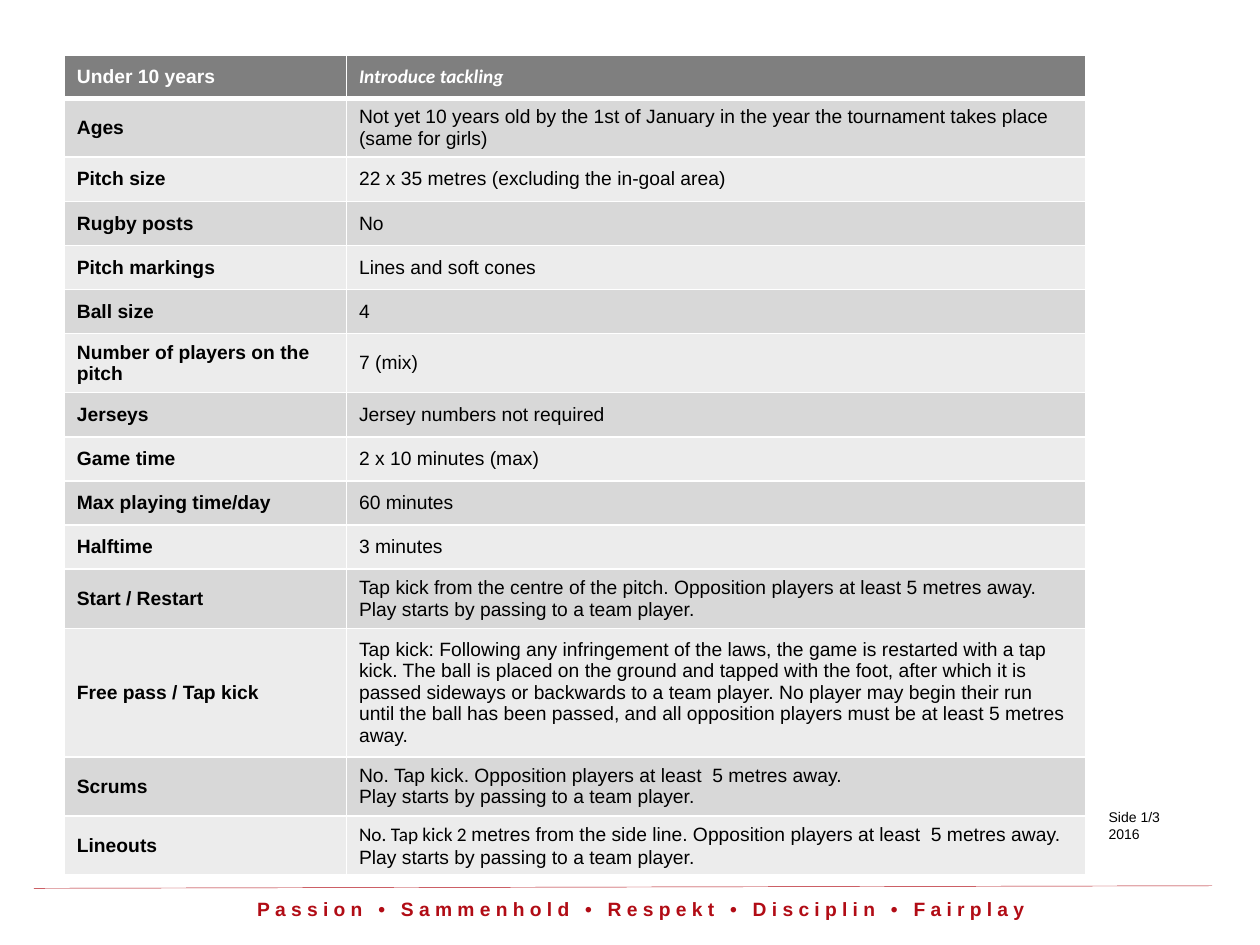
from lxml import etree
from pptx import Presentation, util as u
from pptx.dml.color import RGBColor
from pptx.enum import shapes, text
from pptx.oxml.ns import qn

THEME = {
    "red": RGBColor.from_string("B10C15"),
    "white": RGBColor.from_string("FFFFFF"),
    "black": RGBColor.from_string("000000"),
    "header": RGBColor.from_string("7F7F7F"),
    "bands": [RGBColor.from_string("D8D8D8"), RGBColor.from_string("ECECEC")],
    "body": u.Pt(11),
    "small": u.Pt(8),
}

RULES = [
    (0.34, "Under 10 years", "Introduce tackling"),
    (0.46, "Ages", "Not yet 10 years old by the 1st of January in the year the "
     "tournament takes place\n(same for girls)"),
    (0.35, "Pitch size", "22 x 35 metres (excluding the in-goal area)"),
    (0.35, "Rugby posts", "No"),
    (0.35, "Pitch markings", "Lines and soft cones"),
    (0.35, "Ball size", "4"),
    (0.47, "Number of players on the pitch", "7 (mix)"),
    (0.35, "Jerseys", "Jersey numbers not required"),
    (0.35, "Game time", "2 x 10 minutes (max)"),
    (0.35, "Max playing time/day", "60 minutes"),
    (0.35, "Halftime", "3 minutes"),
    (0.47, "Start / Restart", "Tap kick from the centre of the pitch. Opposition players "
     "at least 5 metres away. Play starts by passing to a team player."),
    (1.02, "Free pass / Tap kick", "Tap kick: Following any infringement of the laws, the "
     "game is restarted with a tap kick. The ball is placed on the ground and tapped with "
     "the foot, after which it is passed sideways or backwards to a team player. No player "
     "may begin their run until the ball has been passed, and all opposition players must "
     "be at least 5 metres away."),
    (0.47, "Scrums", "No. Tap kick. Opposition players at least  5 metres away.\n"
     "Play starts by passing to a team player."),
    (0.47, "Lineouts", "No. Tap kick 2 |metres from the side line. Opposition players "
     "at least  5 metres away.\nPlay starts by passing to a team player."),
]


def write(frame, content, color, **format_values):
    values = {"name": "Arial", "size": THEME["body"], "bold": False, **format_values}
    for index, line in enumerate(content.split("\n")):
        paragraph = frame.add_paragraph() if index else frame.paragraphs[0]
        for part in line.split("|"):
            run = paragraph.add_run()
            run.text = part
            run.font.color.rgb = color
            for key, value in values.items():
                setattr(run.font, key, value)


def add_border(cell, side, points):
    line = etree.SubElement(cell._tc.get_or_add_tcPr(), qn(f"a:ln{side}"),
                            w=str(u.Pt(points)))
    fill = etree.SubElement(line, qn("a:solidFill"))
    etree.SubElement(fill, qn("a:srgbClr"), val=str(THEME["white"]))


prs = Presentation()
prs.slide_width, prs.slide_height = u.Inches(10), u.Inches(7.5)
slide = prs.slides.add_slide(prs.slide_layouts[6])

motto = slide.shapes.add_textbox(u.Inches(1.68), u.Inches(7.07), u.Inches(6.82), u.Inches(0.47))
motto.text_frame.word_wrap = True
write(motto.text_frame, "Passion\u00a0• Sammenhold • Respekt • Disciplin • Fairplay".replace("\u00a0", " "),
      THEME["red"], bold=True)
motto_line = motto.text_frame.paragraphs[0]
motto_line.alignment = text.PP_ALIGN.CENTER
motto_line.runs[0].font._element.set("spc", "300")

footer_rule = slide.shapes.add_connector(
    shapes.MSO_CONNECTOR.STRAIGHT, u.Inches(0.27), u.Inches(7.05), u.Inches(9.62), u.Inches(7.03))
footer_rule.line.color.rgb = THEME["red"]
footer_rule.line.width = u.Pt(0.25)
etree.SubElement(footer_rule._element.spPr, qn("a:effectLst"))

rules = slide.shapes.add_table(
    len(RULES), 2, u.Inches(0.51), u.Inches(0.44), u.Inches(8.11),
    u.Inches(sum(rule[0] for rule in RULES))).table
for column, width in zip(rules.columns, (2.24, 5.87)):
    column.width = u.Inches(width)

for row, (height, *entries) in enumerate(RULES):
    rules.rows[row].height = u.Inches(height)
    for column, entry in enumerate(entries):
        cell = rules.cell(row, column)
        cell.vertical_anchor = text.MSO_ANCHOR.MIDDLE
        for side in "LRTB":
            add_border(cell, side, 3 if (row, side) in ((0, "B"), (1, "T")) else 1)
        cell.fill.solid()
        cell.fill.fore_color.rgb = THEME["bands"][(row - 1) % 2] if row else THEME["header"]
        write(cell.text_frame, entry, THEME["black"] if row else THEME["white"],
              bold=row == 0 or column == 0)

subtitle = rules.cell(0, 1).text_frame.paragraphs[0].runs[0].font
subtitle.name, subtitle.italic = "Calibri", True
rules.cell(len(RULES) - 1, 1).text_frame.paragraphs[0].runs[0].font.name = "Calibri"

page_note = slide.shapes.add_textbox(u.Inches(8.7), u.Inches(6.37), u.Inches(1.14), u.Inches(0.37))
page_note.text_frame.word_wrap = True
write(page_note.text_frame, "Side 1/3\n2016", THEME["black"], size=THEME["small"])

prs.save("out.pptx")
